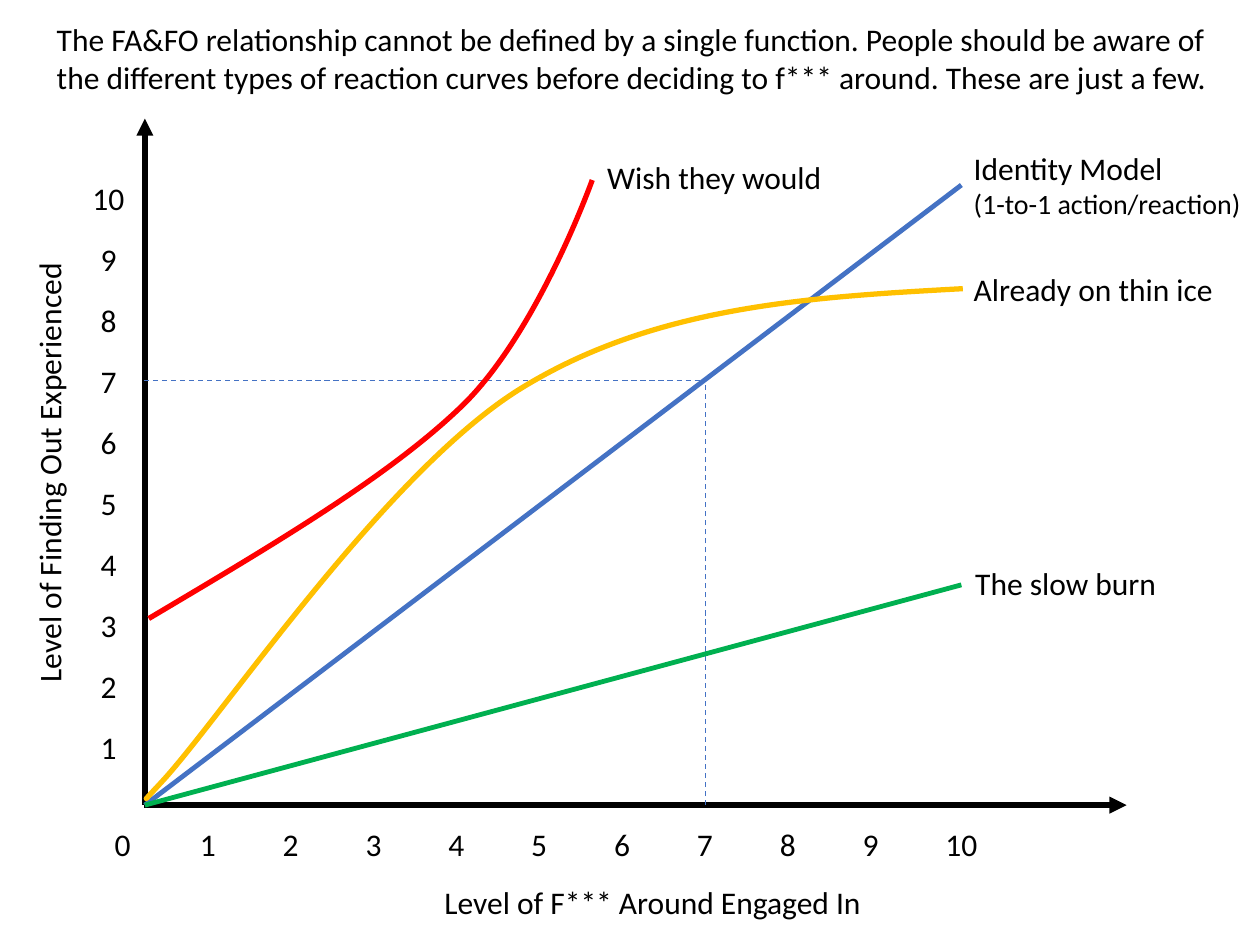
from lxml import etree
from pptx import Presentation
from pptx import util as u
from pptx.dml.color import RGBColor
from pptx.enum import dml, text
from pptx.oxml.ns import qn

COLORS = {"black": "000000", "blue": "4472C4", "amber": "FFC000",
          "green": "00B050", "red": "FF0000"}
FONT = "Calibri"
BOX_HEIGHT = 1.02

# All lengths are in centimetres.
ORIGIN_X, ORIGIN_Y = 2.92, 16.23
CURVE_END_X = 19.38
GUIDE_X, GUIDE_Y = 14.22, 7.67

TITLE = ("The FA&FO relationship cannot be defined by a single function. "
         "People should be aware of the different types of reaction curves "
         "before deciding to f*** around. These are just a few.")

# start, end, colour, width in points, extra format
AXES = [
    ((2.9, ORIGIN_Y), (22.71, ORIGIN_Y), "black", 3.25, {"arrow": True}),
    ((ORIGIN_X, ORIGIN_Y), (ORIGIN_X, 2.39), "black", 3.25, {"arrow": True}),
]
GUIDES = [
    ((2.9, GUIDE_Y), (GUIDE_X, GUIDE_Y), "blue", 0.75, {"dashed": True}),
    ((GUIDE_X, ORIGIN_Y), (GUIDE_X, GUIDE_Y), "blue", 0.75, {"dashed": True}),
]
IDENTITY = ((ORIGIN_X, ORIGIN_Y), (CURVE_END_X, 3.73), "blue", 2.75, {})
SLOW_BURN = ((ORIGIN_X, ORIGIN_Y), (CURVE_END_X, 11.79), "green", 2.75, {})

# start point, then two control points and an end point for each piece
THIN_ICE = [(3.15, 15.88),
            (2.62, 16.46), (3.3, 15.72), (3.3, 15.72),
            (4.52, 14.38), (7.82, 9.47), (10.52, 7.82),
            (13.21, 6.17), (16.31, 5.99), (19.41, 5.82)]
WISH = [(3.0, 12.47),
        (5.44, 11.02), (7.87, 9.6), (9.37, 8.13),
        (10.87, 6.63), (11.94, 3.63), (11.94, 3.63)]

# lines as (text, size), box, extra format
LABELS = [
    ([("Level of F*** Around Engaged In", 18)],
     (8.71, 17.68, 9.17, BOX_HEIGHT), {"wrap": False}),
    ([("Level of Finding Out Experienced", 18)],
     (-5.13, 9.02, 12.24, BOX_HEIGHT),
     {"rotation": 270, "align": text.PP_ALIGN.CENTER}),
    ([("Identity Model", 18), ("(1-to-1 action/reaction)", 16)],
     (19.38, 2.87, 6.02, 1.7), {}),
    ([("Already on thin ice", 18)], (19.38, 5.31, 5.74, BOX_HEIGHT), {}),
    ([("The slow burn", 18)], (19.41, 11.25, 5.74, BOX_HEIGHT), {}),
    ([("Wish they would", 18)], (11.99, 3.07, 5.74, BOX_HEIGHT), {}),
]

X_FIRST, X_STEP, X_TOP = 3.78, 1.67, 16.51
Y_FIRST, Y_STEP, Y_CENTER = 14.55, 1.23, 2.2


def color(name):
    return RGBColor.from_string(COLORS[name])


def write_text(shape, lines, wrap=True, align=text.PP_ALIGN.LEFT,
               anchor=text.MSO_ANCHOR.TOP,
               auto_size=text.MSO_AUTO_SIZE.SHAPE_TO_FIT_TEXT):
    """Put the (text, size) lines into one paragraph with line breaks."""
    frame = shape.text_frame
    frame.word_wrap = wrap
    frame.auto_size = auto_size
    frame.vertical_anchor = anchor
    paragraph = frame.paragraphs[0]
    paragraph.alignment = align
    for index, (words, size) in enumerate(lines):
        if index:
            paragraph.add_line_break()
        run = paragraph.add_run()
        run.text = words
        run.font.name = FONT
        run.font.size = u.Pt(size)
        run.font.color.rgb = color("black")


def place(shape, box):
    shape.left, shape.top, shape.width, shape.height = map(u.Cm, box)


def add_label(slide, lines, box, rotation=0, **text_format):
    shape = slide.shapes.add_textbox(*map(u.Cm, box))
    write_text(shape, lines, **text_format)
    place(shape, box)
    shape.rotation = rotation


def add_line(slide, start, end, color_name, width, arrow=False, dashed=False):
    connector = slide.shapes.add_connector(1, *map(u.Cm, start + end))
    connector.line.color.rgb = color(color_name)
    connector.line.width = u.Pt(width)
    if dashed:
        connector.line.dash_style = dml.MSO_LINE.DASH
    properties = connector._element.spPr
    if arrow:
        etree.SubElement(properties.find(qn("a:ln")), qn("a:tailEnd"),
                         type="triangle")
    etree.SubElement(properties, qn("a:effectLst"))


def add_curve(slide, points, color_name):
    """Draw a Bezier curve: every three straight segments become one piece."""
    first, *others = [(u.Cm(x), u.Cm(y)) for x, y in points]
    builder = slide.shapes.build_freeform(*first)
    builder.add_line_segments(others, close=False)
    shape = builder.convert_to_shape()
    segments = list(shape._element.iter(qn("a:lnTo")))
    outline = segments[0].getparent()
    for index in range(0, len(segments), 3):
        piece = etree.SubElement(outline, qn("a:cubicBezTo"))
        for segment in segments[index:index + 3]:
            piece.append(segment[0])
            outline.remove(segment)
    shape.shadow.inherit = False
    shape.fill.background()
    shape.line.color.rgb = color(color_name)
    shape.line.width = u.Pt(3)


def add_tick_labels(slide):
    add_label(slide, [("0", 18)], (2.06, X_TOP, 0.84, BOX_HEIGHT), wrap=False)
    for number in range(1, 11):
        lines = [(str(number), 18)]
        width = 0.84 if number < 10 else 1.17
        x = X_FIRST + X_STEP * (number - 1)
        y = Y_FIRST - Y_STEP * (number - 1)
        add_label(slide, lines, (x, X_TOP, width, BOX_HEIGHT), wrap=False)
        add_label(slide, lines, (Y_CENTER - width / 2, y, width, BOX_HEIGHT),
                  wrap=False)


def main():
    presentation = Presentation()
    presentation.slide_width, presentation.slide_height = u.Cm(25.4), u.Cm(19.05)
    slide = presentation.slides.add_slide(presentation.slide_layouts[5])

    title = slide.shapes.title
    place(title, (0.89, 0.28, 24.16, 1.8))
    write_text(title, [(TITLE, 18)], auto_size=text.MSO_AUTO_SIZE.NONE)

    for line in AXES + [IDENTITY] + GUIDES:
        add_line(slide, *line[:4], **line[4])
    add_curve(slide, THIN_ICE, "amber")
    add_line(slide, *SLOW_BURN[:4])
    add_curve(slide, WISH, "red")

    add_tick_labels(slide)
    for lines, box, label_format in LABELS:
        add_label(slide, lines, box, **label_format)

    presentation.save("out.pptx")


if __name__ == "__main__":
    main()
